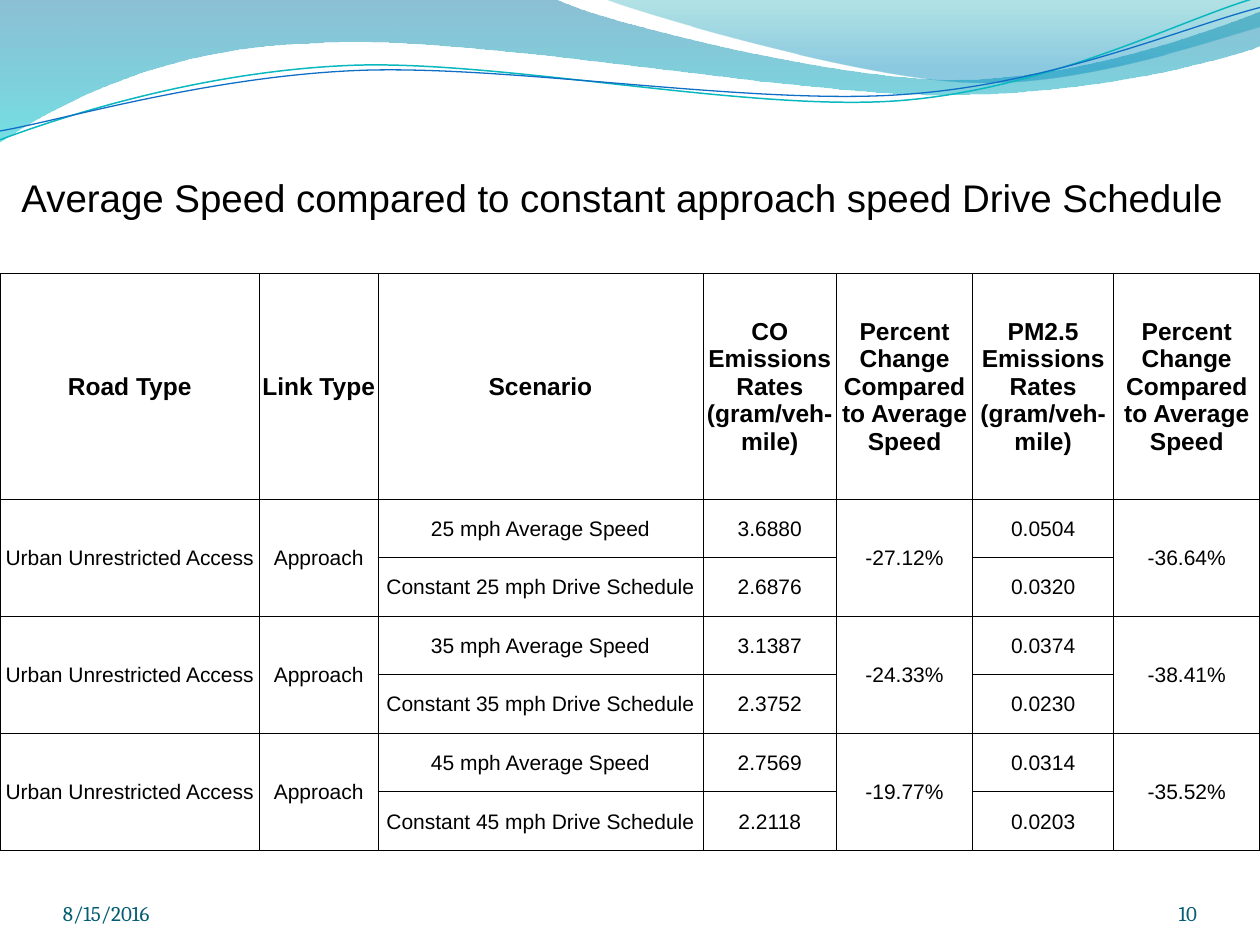
from math import cos, radians, sin

from lxml import etree
from pptx import Presentation
from pptx.dml.color import RGBColor
from pptx.enum.text import MSO_ANCHOR, PP_ALIGN
from pptx.oxml.ns import qn
from pptx.util import Inches, Pt

LEFT, MID, RIGHT = PP_ALIGN.LEFT, PP_ALIGN.CENTER, PP_ALIGN.RIGHT
BOTTOM, CENTER = MSO_ANCHOR.BOTTOM, MSO_ANCHOR.MIDDLE

COLORS = {
    "text": "000000", "foot": "045D75", "rule": "000000",
    "deep": "0074A1", "aqua": "00C6CF", "teal": "00A1A9", "sky": "008BBF",
    "wave": "0AB8BF", "blue": "0F6FC6",
}

# Outlines: each step is one point, or two controls and a point for a curve
BAND = [
    [(0, 0)], [(4.4, -0.01)],
    [(4.76, 0.17), (6.64, 0.63), (7.58, 0.63)],
    [(8.53, 0.63), (9.58, 0.26), (10, 0.09)],
    [(10.01, 0.36)],
    [(9.83, 0.44), (8.7, 0.76), (7.46, 0.75)],
    [(6.22, 0.75), (3.82, 0.28), (2.57, 0.34)],
    [(1.29, 0.36), (0.46, 0.83), (-0.01, 1.13)],
]
CREST = [
    [(4.79, -0.01)],
    [(5.09, 0.11), (6.82, 0.62), (7.69, 0.65)],
    [(8.56, 0.69), (9.61, 0.32), (10, 0.21)],
    [(10, 0)],
]
UPPER = [
    [(0, 1.11)],
    [(0.48, 0.93), (1.58, 0.57), (2.77, 0.52)],
    [(3.95, 0.47), (5.93, 0.89), (7.13, 0.8)],
    [(8.33, 0.71), (9.38, 0.15), (9.98, -0.02)],
]
LOWER = [
    [(0, 1.04)],
    [(0.47, 0.96), (1.64, 0.61), (2.83, 0.56)],
    [(4.03, 0.51), (5.97, 0.84), (7.17, 0.75)],
    [(8.36, 0.67), (9.41, 0.21), (10, 0.06)],
]
TILT = -2.7
PIVOT = (5, 0.58)

COLS = [2.06, 0.94, 2.58, 1.06, 1.08, 1.12, 1.16]
HEAD_H, ROW_H = 1.79, 2.79 / 6
CHANGE = "Percent Change Compared to Average Speed"
HEADS = ["Road Type", "Link Type", "Scenario",
         "CO Emissions Rates (gram/veh-mile)", CHANGE,
         "PM2.5 Emissions Rates (gram/veh-mile)", CHANGE]
# Speed, CO rates, CO change, PM2.5 rates, PM2.5 change
DATA = [
    (25, ("3.6880", "2.6876"), "-27.12%", ("0.0504", "0.0320"), "-36.64%"),
    (35, ("3.1387", "2.3752"), "-24.33%", ("0.0374", "0.0230"), "-38.41%"),
    (45, ("2.7569", "2.2118"), "-19.77%", ("0.0314", "0.0203"), "-35.52%"),
]


def rgb(name):
    return RGBColor.from_string(COLORS[name])


def write(frame, text, size=12, font="Arial", color="text", bold=False,
          align=LEFT):
    para = frame.paragraphs[0]
    para.alignment = align
    run = para.add_run()
    run.text = text
    run.font.size = Pt(size)
    run.font.name = font
    run.font.bold = bold
    run.font.color.rgb = rgb(color)


def add_text(slide, text, box, top=0, **style):
    frame = slide.shapes.add_textbox(*map(Inches, box)).text_frame
    frame.word_wrap = True
    frame.vertical_anchor = BOTTOM
    frame.margin_left = frame.margin_right = frame.margin_bottom = 0
    frame.margin_top = Inches(top)
    write(frame, text, **style)


def add_path(slide, steps, close):
    """Draw the end points, then bend the curved steps."""
    ends = [tuple(map(Inches, step[-1])) for step in steps]
    pen = slide.shapes.build_freeform(*ends[0])
    pen.add_line_segments(ends[1:], close=close)
    shape = pen.convert_to_shape()
    shape.shadow.inherit = False
    lines = list(shape.element.spPr.iter(qn("a:lnTo")))
    for line, step in zip(lines, steps[1:]):
        if len(step) == 1:
            continue
        curve = etree.Element(qn("a:cubicBezTo"))
        for x, y in step:
            etree.SubElement(curve, qn("a:pt"), x=str(Inches(x) - shape.left),
                             y=str(Inches(y) - shape.top))
        line.getparent().replace(line, curve)
    return shape


def add_area(slide, steps, stops):
    shape = add_path(slide, steps, True)
    shape.line.fill.background()
    shape.fill.gradient()
    shape.fill.gradient_angle = 270
    for stop, (place, color, alpha) in zip(shape.fill.gradient_stops, stops):
        stop.position = place
        stop.color.rgb = rgb(color)
    tints = shape.element.spPr.findall(".//" + qn("a:srgbClr"))
    for tint, (place, color, alpha) in zip(tints, stops):
        etree.SubElement(tint, qn("a:alpha"), val=str(alpha * 1000))


def level(point):
    """Turn a point back by the tilt that the shape is given."""
    dx, dy = point[0] - PIVOT[0], point[1] - PIVOT[1]
    c, s = cos(radians(-TILT)), sin(radians(-TILT))
    return PIVOT[0] + dx * c - dy * s, PIVOT[1] + dx * s + dy * c


def add_curve(slide, steps, color, width):
    flat = [[level(point) for point in step] for step in steps]
    shape = add_path(slide, flat, False)
    shape.rotation = TILT
    shape.fill.background()
    shape.line.color.rgb = rgb(color)
    shape.line.width = Pt(width)


def fill_cell(cell, text, **style):
    cell.margin_left = cell.margin_right = cell.margin_top = Inches(0.01)
    cell.margin_bottom = 0
    cell.vertical_anchor = CENTER
    props = cell._tc.get_or_add_tcPr()
    for side in ("lnL", "lnR", "lnT", "lnB"):
        line = etree.SubElement(props, qn("a:" + side), w=str(Pt(0.5)))
        fill = etree.SubElement(line, qn("a:solidFill"))
        etree.SubElement(fill, qn("a:srgbClr"), val=COLORS["rule"])
    cell.fill.background()
    if text:
        write(cell.text_frame, text, align=MID, **style)


def get_rows():
    for speed, co, co_diff, pm, pm_diff in DATA:
        yield ["Urban Unrestricted Access", "Approach",
               f"{speed} mph Average Speed", co[0], co_diff, pm[0], pm_diff]
        yield ["", "", f"Constant {speed} mph Drive Schedule",
               co[1], "", pm[1], ""]


def add_grid(slide):
    rows = list(get_rows())
    table = slide.shapes.add_table(
        len(rows) + 1, len(COLS), 0, Inches(2.17), Inches(10),
        Inches(HEAD_H + ROW_H * len(rows))).table
    table.first_row = table.horz_banding = False
    for col, width in zip(table.columns, COLS):
        col.width = Inches(width)
    for r, row in enumerate([HEADS] + rows):
        head = r == 0
        table.rows[r].height = Inches(HEAD_H if head else ROW_H)
        for c, text in enumerate(row):
            fill_cell(table.cell(r, c), text, size=14 if head else 12,
                      bold=head)
    # Each speed spans two rows in the shared columns
    for r in range(1, len(rows), 2):
        for c in (0, 1, 4, 6):
            table.cell(r, c).merge(table.cell(r + 1, c))


def main():
    deck = Presentation()
    deck.slide_width, deck.slide_height = Inches(10), Inches(7.5)
    slide = deck.slides.add_slide(deck.slide_layouts[6])

    # Waves along the top
    add_area(slide, BAND, [(0, "deep", 45), (1, "aqua", 55)])
    add_area(slide, CREST, [(0, "teal", 30), (0.8, "sky", 45)])
    add_curve(slide, UPPER, "wave", 0.85)
    add_curve(slide, LOWER, "blue", 0.75)

    # Footer
    foot = {"font": "Cambria", "color": "foot"}
    add_text(slide, "8/15/2016", (0.5, 6.95, 2.33, 0.4), **foot)
    add_text(slide, "10", (8.67, 6.95, 0.83, 0.4), align=RIGHT, **foot)

    # Title and table
    add_text(slide, "Average Speed compared to constant approach speed "
             "Drive Schedule", (0.17, 0.83, 9.83, 0.92), top=0.05, size=22)
    add_grid(slide)

    deck.save("out.pptx")


if __name__ == "__main__":
    main()
